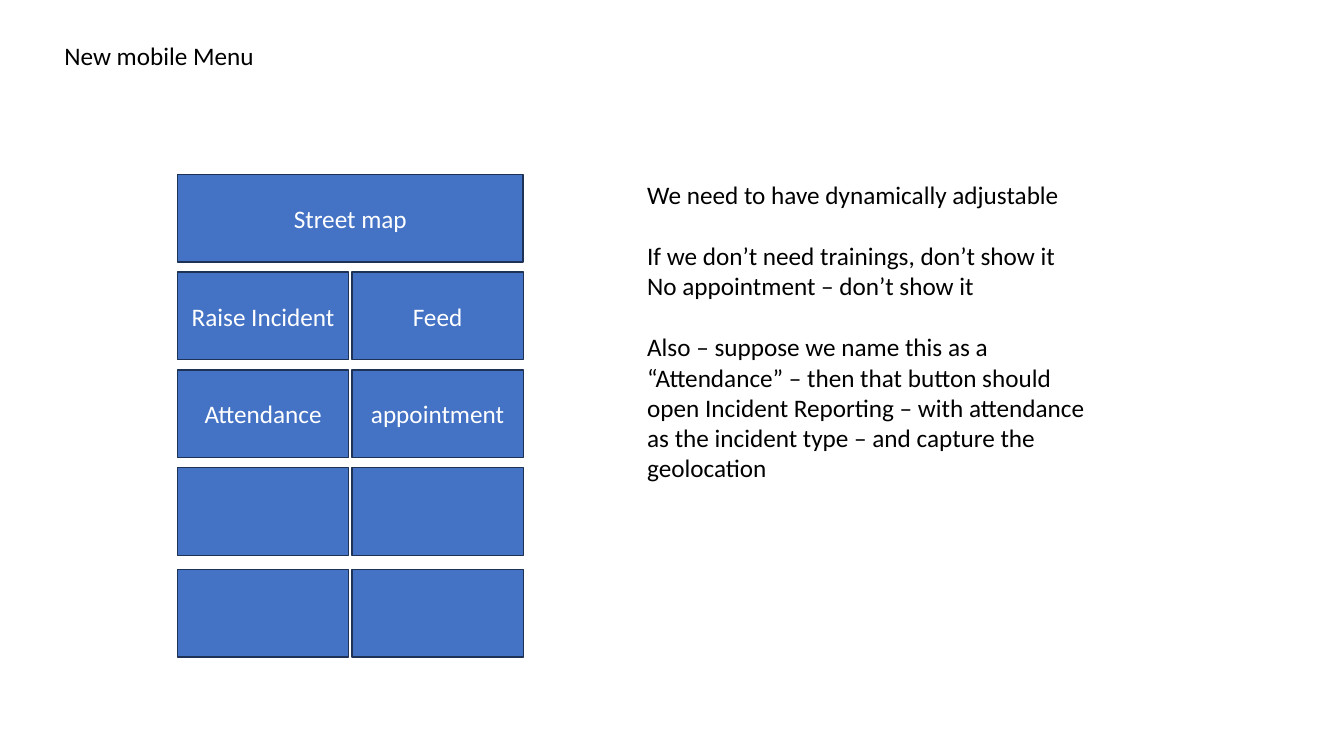
from dataclasses import dataclass

from pptx import Presentation
from pptx.dml.color import RGBColor
from pptx.enum.shapes import MSO_SHAPE as Preset
from pptx.enum.text import MSO_ANCHOR as Anchor, MSO_AUTO_SIZE as AutoSize, PP_ALIGN as Align
from pptx.slide import Slide
from pptx.text.text import TextFrame
from pptx.util import Inches, Pt


@dataclass(frozen=True)
class Theme:
    font: str = "Calibri"
    size: Pt = Pt(18)
    blank_line: Pt = Pt(22)
    outline_width: Pt = Pt(1)
    ink: RGBColor = RGBColor(0x00, 0x00, 0x00)
    button_ink: RGBColor = RGBColor(0xFF, 0xFF, 0xFF)
    button: RGBColor = RGBColor(0x44, 0x72, 0xC4)
    outline: RGBColor = RGBColor(0x1E, 0x32, 0x56)


@dataclass(frozen=True)
class Line:
    text: str
    starts_block: bool = False


@dataclass(frozen=True)
class MenuRow:
    labels: tuple[str, ...]
    extra_gap: float = 0


THEME = Theme()

MENU_LEFT, MENU_TOP, MENU_WIDTH = 1.76, 1.73, 3.43
BUTTON_HEIGHT, ROW_PITCH, COLUMN_GAP = 0.87, 0.97, 0.03
NOTE_WIDTH = 4.65

MENU = (
    MenuRow(("Street map",)),
    MenuRow(("Raise Incident", "Feed")),
    MenuRow(("Attendance", "appointment")),
    MenuRow(("", "")),
    MenuRow(("", ""), extra_gap=0.04),
)

HEADING = (Line("New mobile Menu"),)
REQUIREMENTS = (
    Line("We need to have dynamically adjustable"),
    Line("If we don’t need trainings, don’t show it", starts_block=True),
    Line("No appointment – don’t show it"),
    Line(
        "Also – suppose we name this as a “Attendance” – then that button should "
        "open Incident Reporting – with attendance as the incident type – and "
        "capture the geolocation",
        starts_block=True,
    ),
)


def write_lines(frame: TextFrame, lines: tuple[Line, ...], ink: RGBColor, align: Align) -> None:
    for index, line in enumerate(lines):
        paragraph = frame.add_paragraph() if index else frame.paragraphs[0]
        paragraph.alignment = align
        if line.starts_block:
            paragraph.space_before = THEME.blank_line
        run = paragraph.add_run()
        run.text = line.text
        run.font.color.rgb = ink
        for name, value in {"name": THEME.font, "size": THEME.size}.items():
            setattr(run.font, name, value)


def add_note(slide: Slide, left: float, top: float, height: float, lines: tuple[Line, ...]) -> None:
    note = slide.shapes.add_textbox(Inches(left), Inches(top), Inches(NOTE_WIDTH), Inches(height))
    for name, value in {"word_wrap": True, "auto_size": AutoSize.SHAPE_TO_FIT_TEXT}.items():
        setattr(note.text_frame, name, value)
    write_lines(note.text_frame, lines, THEME.ink, Align.LEFT)


def add_button(slide: Slide, left: float, top: float, width: float, label: str) -> None:
    button = slide.shapes.add_shape(
        Preset.RECTANGLE, Inches(left), Inches(top), Inches(width), Inches(BUTTON_HEIGHT)
    )
    button.shadow.inherit = False
    button.fill.solid()
    button.fill.fore_color.rgb = THEME.button
    button.line.color.rgb = THEME.outline
    button.line.width = THEME.outline_width
    if label:
        button.text_frame.vertical_anchor = Anchor.MIDDLE
        write_lines(button.text_frame, (Line(label),), THEME.button_ink, Align.CENTER)


def add_menu(slide: Slide) -> None:
    """Each row shares the menu width equally among its buttons."""
    top = MENU_TOP
    for row in MENU:
        top += row.extra_gap
        count = len(row.labels)
        width = (MENU_WIDTH - COLUMN_GAP * (count - 1)) / count
        for column, label in enumerate(row.labels):
            add_button(slide, MENU_LEFT + column * (width + COLUMN_GAP), top, width, label)
        top += ROW_PITCH


def main() -> None:
    deck = Presentation()
    deck.slide_width, deck.slide_height = Inches(13.33), Inches(7.5)
    slide = deck.slides.add_slide(deck.slide_layouts[6])
    add_note(slide, 0.54, 0.35, 0.4, HEADING)
    add_menu(slide)
    add_note(slide, 6.32, MENU_TOP, 3.43, REQUIREMENTS)
    deck.save("out.pptx")


if __name__ == "__main__":
    main()
